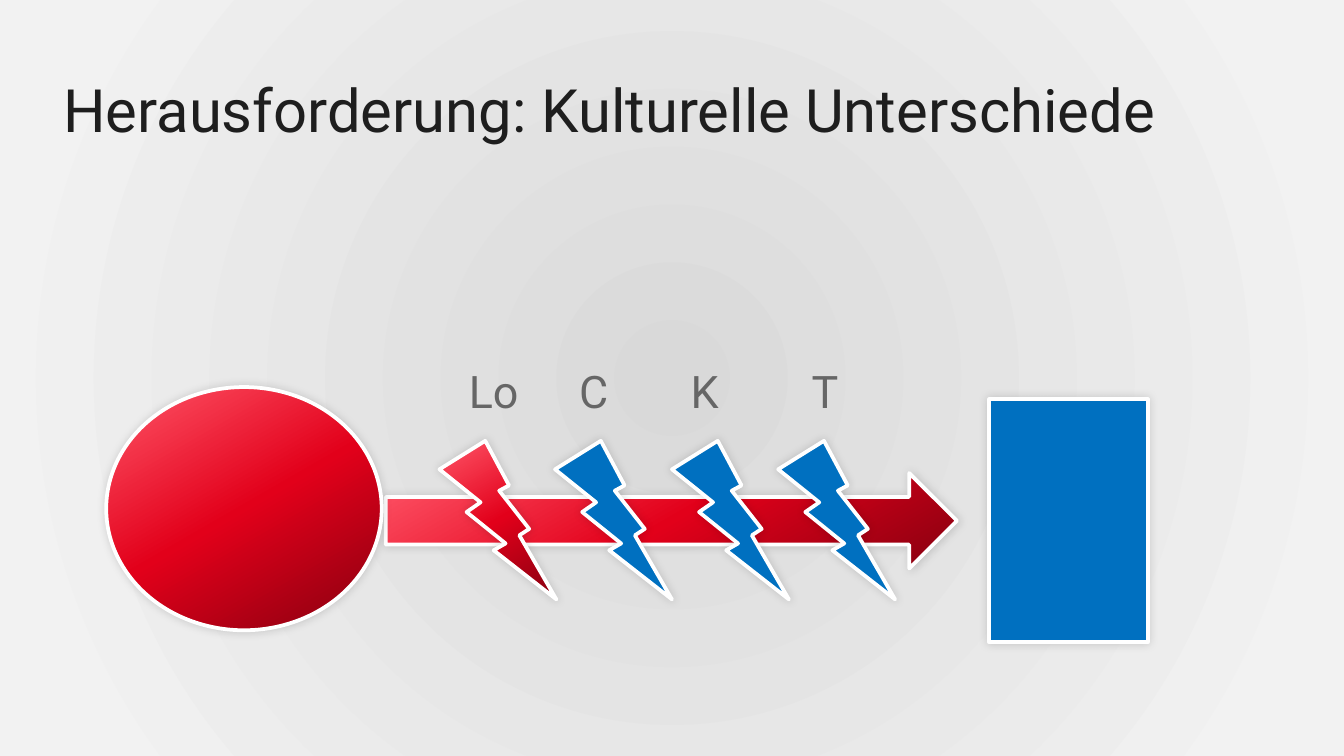
from lxml.etree import SubElement
from pptx import Presentation
from pptx.dml.color import RGBColor
from pptx.enum.shapes import MSO_SHAPE as Kind
from pptx.enum.text import MSO_ANCHOR as Anchor, MSO_AUTO_SIZE as Fit, PP_ALIGN as Align
from pptx.oxml.ns import qn
from pptx.util import Inches, Pt

BLUE = "0070C0"
REDS = [(0, "FF5568"), (50, "E2001A"), (100, "870010")]
GREYS = [(0, "D9D9D9"), (90, "F2F2F2")]


def color(code):
    return RGBColor.from_string(code)


def add(parent, tag, **attrs):
    return SubElement(parent, qn(tag), {k: str(v) for k, v in attrs.items()})


def blend(grad, stops, angle=None):
    """Fill a gradient: linear with an angle, else circular."""
    for child in list(grad):
        grad.remove(child)
    group = add(grad, "a:gsLst")
    for pos, code in stops:
        stop = add(group, "a:gs", pos=pos * 1000)
        add(stop, "a:srgbClr", val=code)
    if angle is None:
        ring = add(grad, "a:path", path="circle")
        add(ring, "a:fillToRect", l=50000, t=50000, r=50000, b=50000)
    else:
        add(grad, "a:lin", ang=angle * 60000, scaled=0)


def style(item, **values):
    for name, value in values.items():
        setattr(item, name, value)


def write(frame, text, size, code):
    frame.text = text
    para = frame.paragraphs[0]
    para.alignment = Align.LEFT
    font = para.runs[0].font
    style(font, name="Roboto", size=Pt(size), bold=False)
    font.color.rgb = color(code)


def draw(slide, kind, box, red=False):
    """Add a white-edged shape with a soft shadow."""
    shape = slide.shapes.add_shape(kind, *map(Inches, box))
    if red:
        shape.fill.gradient()
        blend(shape._element.xpath("./p:spPr/a:gradFill")[0], REDS, 60)
    else:
        shape.fill.solid()
        shape.fill.fore_color.rgb = color(BLUE)
    shape.line.color.rgb = color("FFFFFF")
    shape.line.width = Pt(2)
    shape.shadow.inherit = False
    effects = shape._element.xpath("./p:spPr/a:effectLst")[0]
    glow = add(effects, "a:outerShdw", blurRad=Pt(5), dist=0, dir=0,
               algn="ctr", rotWithShape=0)
    tint = add(glow, "a:srgbClr", val="000000")
    add(tint, "a:alpha", val=15000)


def label(slide, text, box):
    frame = slide.shapes.add_textbox(*map(Inches, box)).text_frame
    style(frame, word_wrap=True, auto_size=Fit.SHAPE_TO_FIT_TEXT)
    write(frame, text, 24, "666666")


def header(slide, text, box):
    title = slide.shapes.title
    title.left, title.top, title.width, title.height = map(Inches, box)
    frame = title.text_frame
    style(frame, word_wrap=True, auto_size=Fit.NONE, vertical_anchor=Anchor.TOP,
          **{f"margin_{s}": Inches(0.04) for s in ("left", "top", "right", "bottom")})
    write(frame, text, 32, "1E1E1E")


def flow(slide, left, top):
    """Sender, arrow with four barriers, and receiver."""
    draw(slide, Kind.RECTANGLE, (left + 6.57, top + 0.31, 1.18, 1.81))
    draw(slide, Kind.RIGHT_ARROW, (left + 2.08, top + 0.86, 4.25, 0.71), red=True)
    draw(slide, Kind.OVAL, (left, top + 0.22, 2.05, 1.81), red=True)

    # Barriers, the rightmost at the back
    for x in (5, 4.21, 3.34, 2.48):
        draw(slide, Kind.LIGHTNING_BOLT, (left + x, top + 0.62, 0.87, 1.18), red=x == 2.48)

    # Letters above the barriers
    for text, x, wide in (("T", 5.15, 0.35), ("C", 3.42, 0.35),
                          ("Lo", 2.6, 0.67), ("K", 4.25, 0.35)):
        label(slide, text, (left + x, top, wide, 0.5))


def main():
    deck = Presentation()
    deck.slide_width = Inches(10)
    deck.slide_height = deck.slide_width * 9 // 16
    slide = deck.slides.add_slide(deck.slide_layouts[5])
    slide.background.fill.gradient()
    blend(slide._element.xpath(".//p:bg//a:gradFill")[0], GREYS)
    header(slide, "Herausforderung: Kulturelle Unterschiede", (0.43, 0.5, 9.29, 1.13))
    flow(slide, 0.79, 2.66)
    deck.save("out.pptx")


if __name__ == "__main__":
    main()
